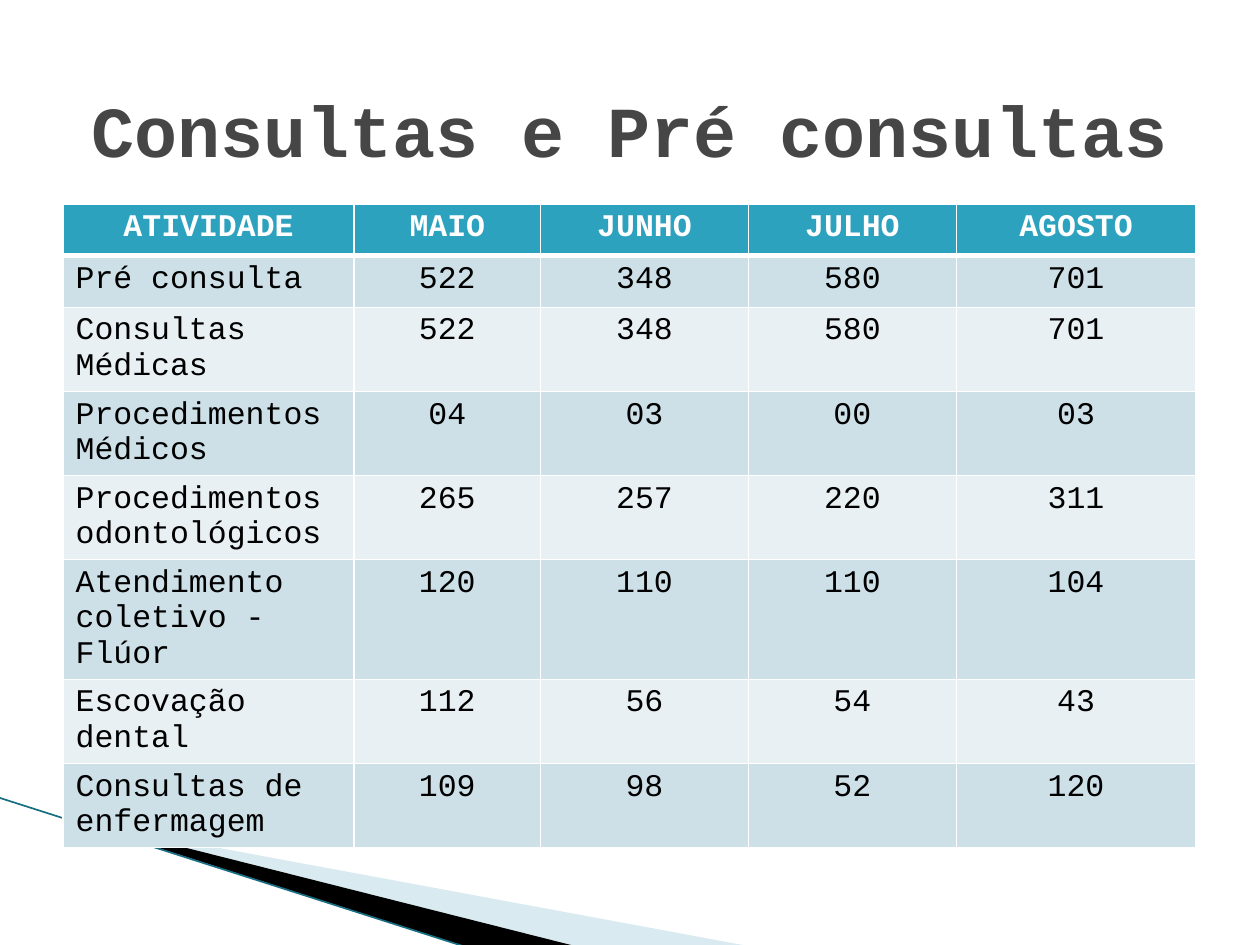
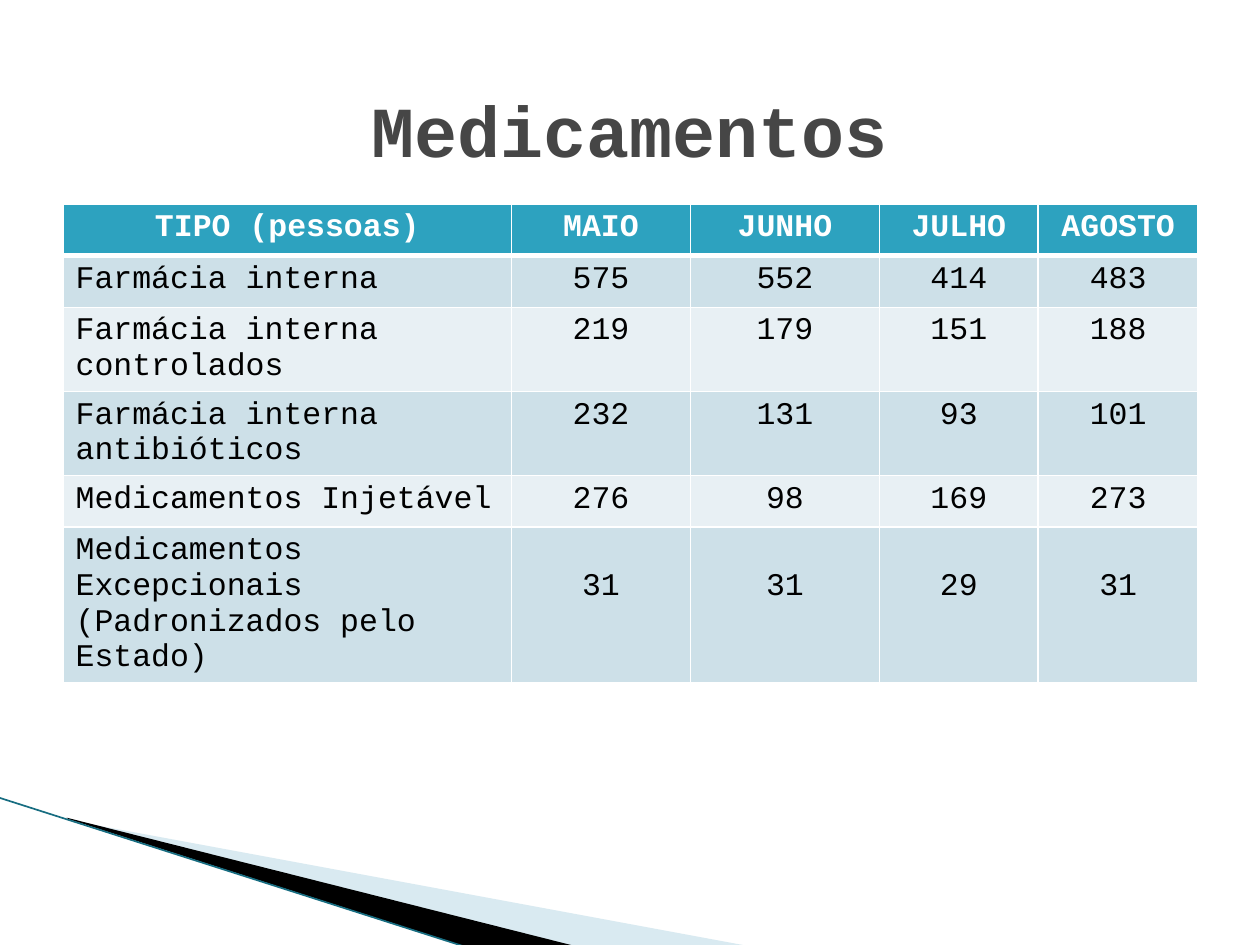
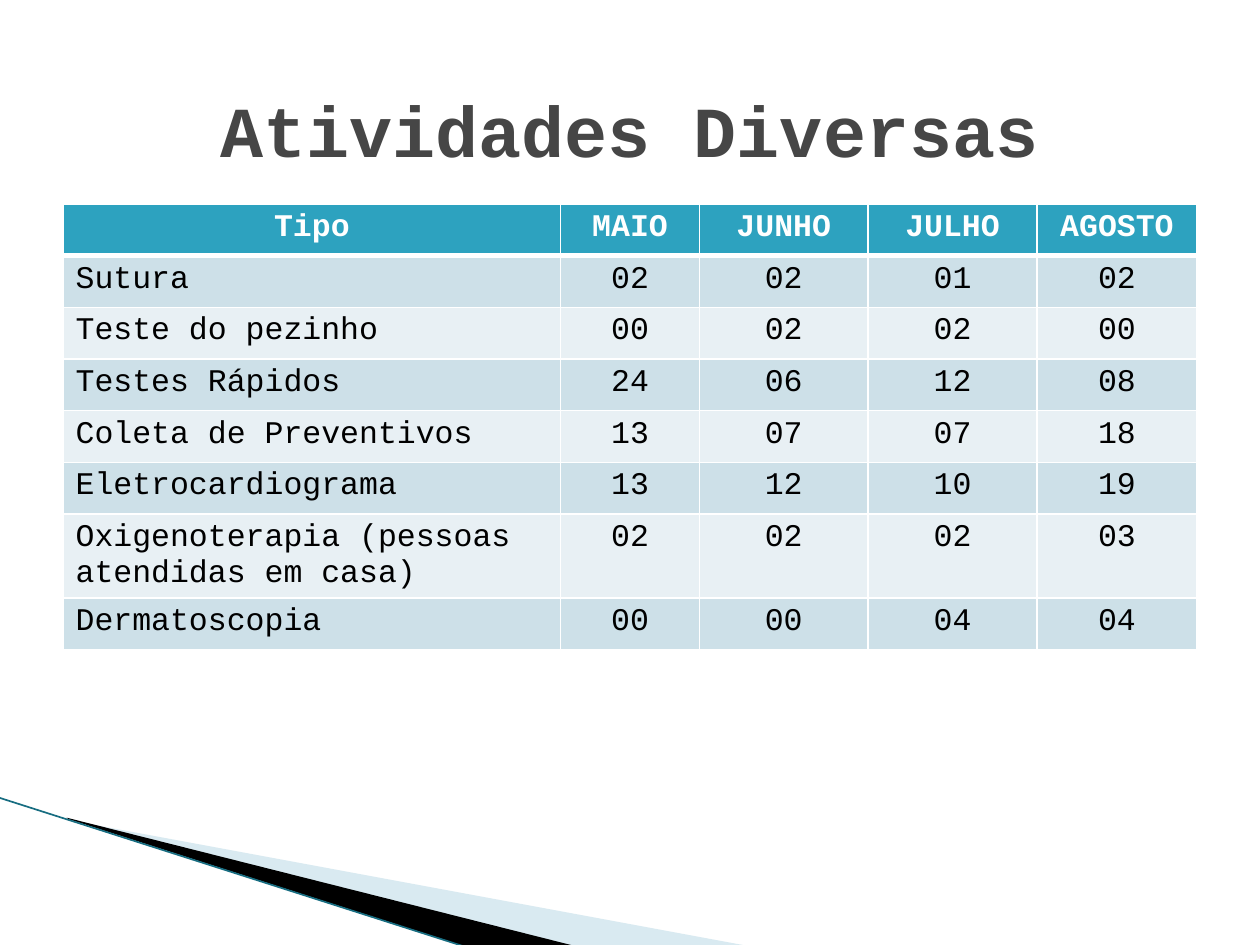
"""Build three slides of monthly health service tables."""
import copy
from dataclasses import dataclass

import pptx
import pptx.dml.color
import pptx.enum.shapes
import pptx.enum.text
import pptx.oxml
import pptx.oxml.ns
import pptx.util
from pptx.util import Inches, Pt


@dataclass(frozen=True)
class Theme:
    font: str = "Courier New"
    title_size: int = 41
    table_size: int = 18
    title: str = "464646"
    header: str = "2DA2BF"
    header_text: str = "FFFFFF"
    body_text: str = "000000"
    bands: tuple = ("CDE0E8", "E8F0F4")
    border: str = "FFFFFF"
    thin: int = 1
    thick: int = 3
    wedge_light: str = "A0CBDC"
    wedge_dark: str = "000000"
    edge: str = "176D81"


THEME = Theme()
MONTHS = ("MAIO", "JUNHO", "JULHO", "AGOSTO")
LEFT, TABLE_TOP, WIDTH, ROW_HEIGHT = 0.5, 1.62, 9, 0.41
LOWERED_MARGIN = 0.33

SLIDES = [
    {
        "title": "Consultas e Pré consultas",
        "heading": "ATIVIDADE",
        "columns": (2.31, 1.48, 1.65, 1.65, 1.9),
        "rows": [
            ("Pré consulta", "522", "348", "580", "701"),
            ("Consultas Médicas", "522", "348", "580", "701"),
            ("Procedimentos Médicos", "04", "03", "00", "03"),
            ("Procedimentos odontológicos", "265", "257", "220", "311"),
            ("Atendimento coletivo - Flúor", "120", "110", "110", "104"),
            ("Escovação dental", "112", "56", "54", "43"),
            ("Consultas de enfermagem", "109", "98", "52", "120"),
        ],
    },
    {
        "title": "Medicamentos",
        "heading": "TIPO (pessoas)",
        "columns": (3.56, 1.42, 1.5, 1.26, 1.27),
        "rows": [
            ("Farmácia interna", "575", "552", "414", "483"),
            ("Farmácia interna controlados", "219", "179", "151", "188"),
            ("Farmácia interna antibióticos", "232", "131", "93", "101"),
            ("Medicamentos Injetável", "276", "98", "169", "273"),
            ("Medicamentos Excepcionais (Padronizados pelo Estado)", "31", "31", "29", "31"),
        ],
        "lowered_row": 5,
    },
    {
        "title": "Atividades Diversas",
        "heading": "Tipo",
        "columns": (3.95, 1.1, 1.34, 1.34, 1.27),
        "rows": [
            ("Sutura", "02", "02", "01", "02"),
            ("Teste do pezinho", "00", "02", "02", "00"),
            ("Testes Rápidos", "24", "06", "12", "08"),
            ("Coleta de Preventivos", "13", "07", "07", "18"),
            ("Eletrocardiograma", "13", "12", "10", "19"),
            ("Oxigenoterapia (pessoas atendidas em casa)", "02", "02", "02", "03"),
            ("Dermatoscopia", "00", "00", "04", "04"),
        ],
    },
]

WEDGES = [
    (THEME.wedge_light, 40, [(0.55, 6.51), (5.95, 7.51), (4.56, 7.51), (0.55, 6.5)]),
    (THEME.wedge_dark, 100, [(0.53, 6.49), (4.57, 7.51), (3.72, 7.52), (0.54, 6.5)]),
]
EDGE = (-0.01, 6.33, 3.71, 7.52)


def rgb(color):
    return pptx.dml.color.RGBColor.from_string(color)


def style(paragraph, size, color, bold, centered):
    if centered:
        paragraph.alignment = pptx.enum.text.PP_ALIGN.CENTER
    paragraph.font.name = THEME.font
    paragraph.font.size = Pt(size)
    paragraph.font.bold = bold
    paragraph.font.color.rgb = rgb(color)


def add_corner(slide):
    for color, opacity, points in WEDGES:
        corners = [(Inches(x), Inches(y)) for x, y in points]
        builder = slide.shapes.build_freeform(*corners[0])
        builder.add_line_segments(corners[1:], close=True)
        wedge = builder.convert_to_shape()
        wedge.shadow.inherit = False
        wedge.fill.solid()
        wedge.fill.fore_color.rgb = rgb(color)
        wedge.line.fill.background()
        if opacity < 100:
            fill = wedge.fill._xPr.find(".//" + pptx.oxml.ns.qn("a:srgbClr"))
            alpha = fill.makeelement(pptx.oxml.ns.qn("a:alpha"), {"val": str(opacity * 1000)})
            fill.append(alpha)
    edge = slide.shapes.add_connector(
        pptx.enum.shapes.MSO_CONNECTOR.STRAIGHT, *map(Inches, EDGE))
    edge.line.color.rgb = rgb(THEME.edge)
    edge.line.width = Pt(0.95)
    properties = edge._element.spPr
    properties.append(properties.makeelement(pptx.oxml.ns.qn("a:effectLst"), {}))


def border_cell(cell, top, bottom):
    widths = {"lnL": THEME.thin, "lnR": THEME.thin, "lnT": top, "lnB": bottom}
    for index, (side, width) in enumerate(widths.items()):
        line = pptx.oxml.parse_xml(
            f'<a:{side} {pptx.oxml.ns.nsdecls("a")} w="{Pt(width)}"><a:solidFill>'
            f'<a:srgbClr val="{THEME.border}"/></a:solidFill></a:{side}>')
        cell._tc.get_or_add_tcPr().insert(index, line)


def add_table(slide, content):
    rows = [(content["heading"], *MONTHS), *content["rows"]]
    table = slide.shapes.add_table(
        len(rows), len(rows[0]), Inches(LEFT), Inches(TABLE_TOP),
        Inches(WIDTH), Inches(ROW_HEIGHT * len(rows))).table
    table.horz_banding = False
    for column, width in zip(table.columns, content["columns"]):
        column.width = Inches(width)
    for row_index, values in enumerate(rows):
        header = row_index == 0
        table.rows[row_index].height = Inches(ROW_HEIGHT)
        for column_index, value in enumerate(values):
            cell = table.cell(row_index, column_index)
            cell.text = value
            cell.fill.solid()
            cell.fill.fore_color.rgb = rgb(
                THEME.header if header else THEME.bands[(row_index - 1) % 2])
            border_cell(cell, THEME.thick if row_index == 1 else THEME.thin,
                        THEME.thick if header else THEME.thin)
            style(cell.text_frame.paragraphs[0], THEME.table_size,
                  THEME.header_text if header else THEME.body_text,
                  header, header or column_index > 0)
            if column_index and row_index == content.get("lowered_row"):
                cell.margin_top = Inches(LOWERED_MARGIN)


def add_title(slide, text):
    frame = slide.shapes.add_textbox(
        Inches(LEFT), Inches(0.3), Inches(WIDTH), Inches(1.25)).text_frame
    frame.word_wrap = True
    frame.vertical_anchor = pptx.enum.text.MSO_ANCHOR.MIDDLE
    frame.margin_top = Inches(0.25)
    frame.text = text
    style(frame.paragraphs[0], THEME.title_size, THEME.title, True, True)


def main():
    presentation = pptx.Presentation()
    presentation.slide_width, presentation.slide_height = Inches(10), Inches(7.5)
    for content in SLIDES:
        slide = presentation.slides.add_slide(presentation.slide_layouts[6])
        add_corner(slide)
        add_table(slide, content)
        add_title(slide, content["title"])
    presentation.save("out.pptx")


if __name__ == "__main__":
    main()
